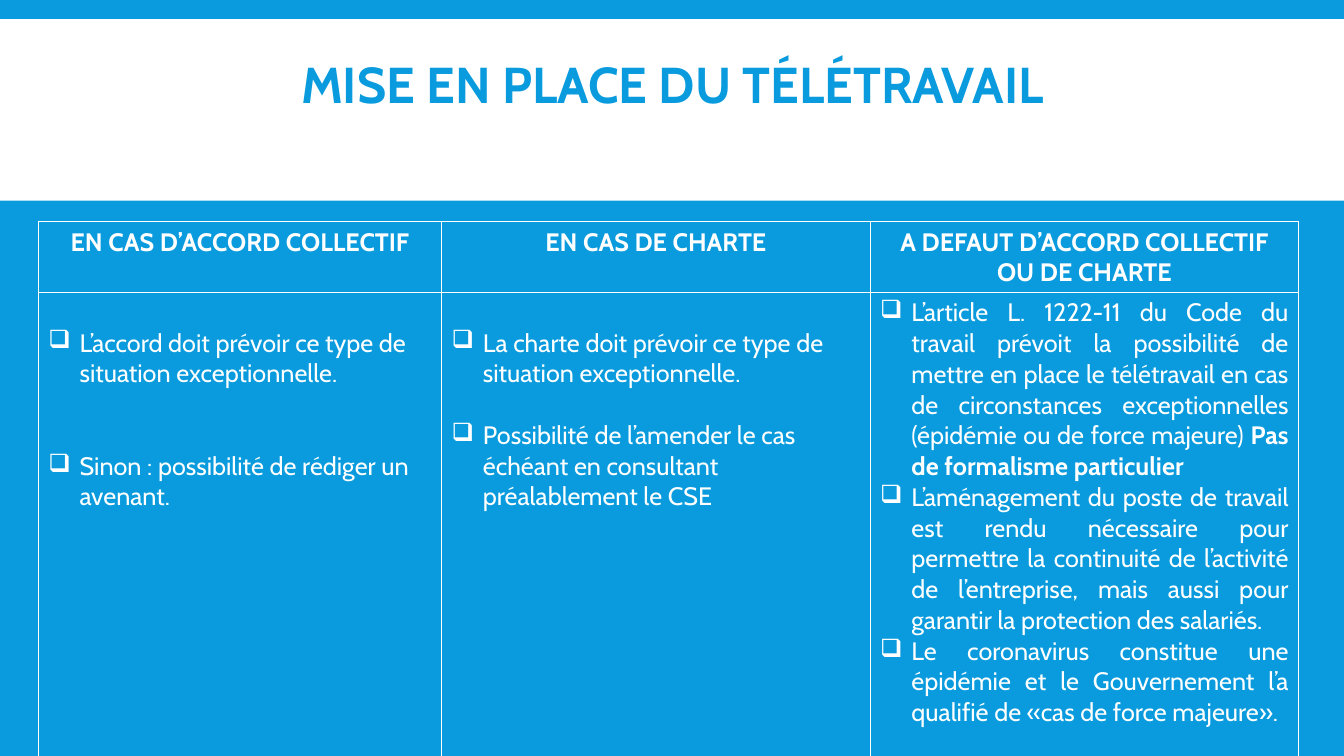
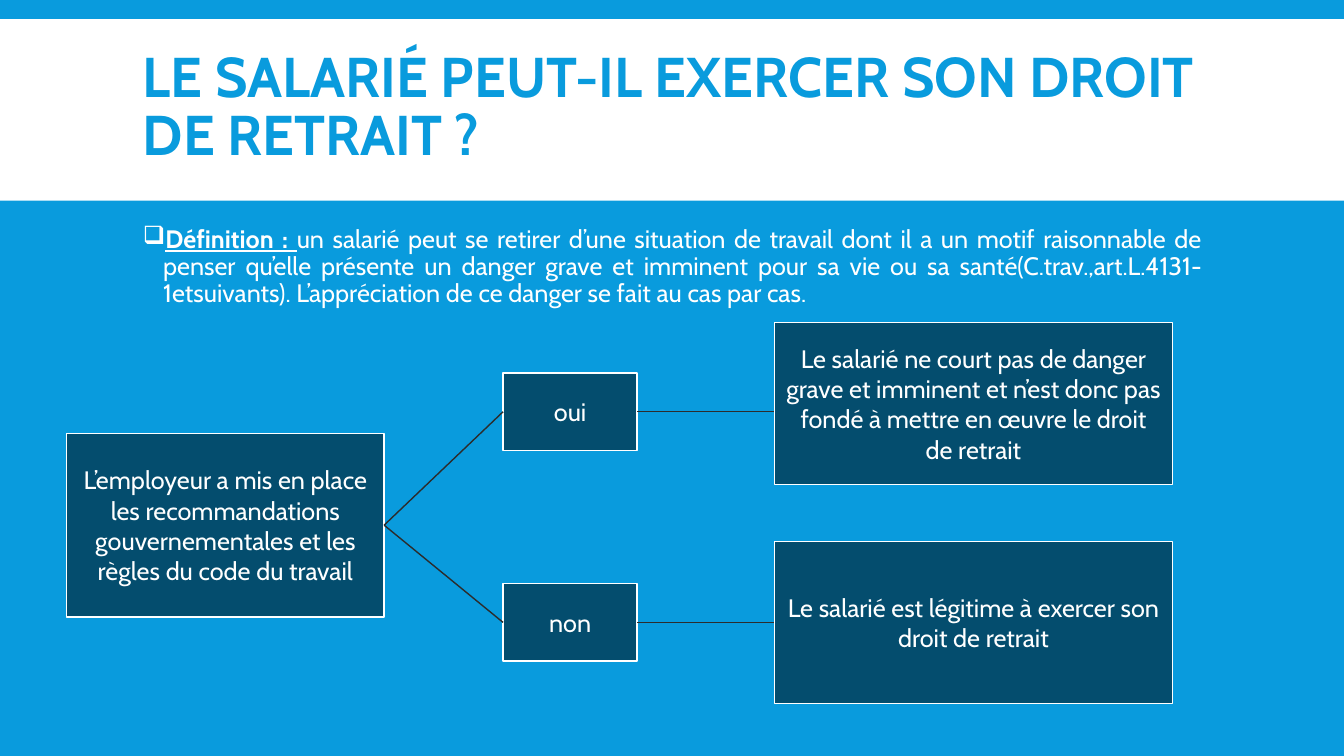
from lxml import etree
from pptx import Presentation
from pptx.dml.color import RGBColor
from pptx.enum import shapes, text
from pptx.oxml import ns
from pptx.util import Inches, Pt

BLUE = RGBColor(0x09, 0x9B, 0xDD)
NAVY = RGBColor(0x04, 0x4D, 0x6E)
WHITE = RGBColor(0xFF, 0xFF, 0xFF)
CHARCOAL = RGBColor(0x2C, 0x2C, 0x2C)
FONT = "Cabin"
SLIDE_WIDTH, SLIDE_HEIGHT = 13.33, 7.5
TEXT_LEFT, TEXT_WIDTH = 1.32, 10.7
LEFT, CENTER, JUSTIFY = text.PP_ALIGN.LEFT, text.PP_ALIGN.CENTER, text.PP_ALIGN.JUSTIFY
LINE_GAP = 22  # height of one 18 pt line, in points

HEADINGS = ["EN CAS D’ACCORD COLLECTIF", "EN CAS DE CHARTE",
            "A DEFAUT D’ACCORD COLLECTIF OU DE CHARTE"]
# One entry per column: alignment, top margin, gap between items, items made of (text, bold) runs
COLUMNS = [
    (LEFT, 0.35, 2 * LINE_GAP, [
        [("L’accord doit prévoir ce type de situation exceptionnelle.", False)],
        [("Sinon : possibilité de rédiger un avenant.", False)]]),
    (LEFT, 0.35, LINE_GAP, [
        [("La charte doit prévoir ce type de situation exceptionnelle.", False)],
        [("Possibilité de l’amender le cas échéant en consultant préalablement le CSE", False)]]),
    (JUSTIFY, 0.05, 0, [
        [("L’article L. 1222-11 du Code du travail prévoit la possibilité de mettre en place le "
          "télétravail en cas de circonstances exceptionnelles (épidémie ou de force majeure) ", False),
         ("Pas de formalisme particulier", True)],
        [("L’aménagement du poste de travail est rendu nécessaire pour permettre la continuité de "
          "l’activité de l’entreprise, mais aussi pour garantir la protection des salariés.", False)],
        [("Le coronavirus constitue une épidémie et le Gouvernement l’a qualifié de "
          "«cas de force majeure».", False)]]),
]


def set_font(paragraph, size=18, color=WHITE, bold=None):
    font = paragraph.font
    font.name, font.size, font.bold = FONT, Pt(size), bold
    font.color.rgb = color


def add_bullet(paragraph, indent):
    properties = paragraph._p.get_or_add_pPr()
    properties.set("marL", str(Inches(indent)))
    properties.set("indent", str(-Inches(indent)))
    bullet = etree.Element(ns.qn("a:buChar"), char="❑")
    # Bullets come before the default run properties
    default_run = properties.find(ns.qn("a:defRPr"))
    if default_run is None:
        properties.append(bullet)
    else:
        default_run.addprevious(bullet)


def add_rectangle(slide, box, fill):
    rectangle = slide.shapes.add_shape(shapes.MSO_SHAPE.RECTANGLE, *map(Inches, box))
    rectangle.shadow.inherit = False
    rectangle.fill.solid()
    rectangle.fill.fore_color.rgb = fill
    return rectangle


def add_text_box(slide, box):
    frame = slide.shapes.add_textbox(*map(Inches, box)).text_frame
    frame.word_wrap = True
    return frame


def add_titled_slide(presentation, title, top, height, size, alignment):
    """Blue slide with the white band and its title."""
    slide = presentation.slides.add_slide(presentation.slide_layouts[6])
    slide.background.fill.solid()
    slide.background.fill.fore_color.rgb = BLUE
    add_rectangle(slide, (0, 0.19, SLIDE_WIDTH, 1.8), WHITE).line.fill.background()

    frame = add_text_box(slide, (TEXT_LEFT, top, TEXT_WIDTH, height))
    frame.vertical_anchor = text.MSO_ANCHOR.MIDDLE
    paragraph = frame.paragraphs[0]
    paragraph.text = title
    paragraph.alignment = alignment
    paragraph.line_spacing = 0.85
    set_font(paragraph, size, BLUE, True)
    return slide


def set_borders(cell):
    properties = cell._tc.get_or_add_tcPr()
    for position, side in enumerate(("lnL", "lnR", "lnT", "lnB")):
        line = etree.Element(ns.qn(f"a:{side}"), w=str(Pt(1)))
        fill = etree.SubElement(line, ns.qn("a:solidFill"))
        etree.SubElement(fill, ns.qn("a:srgbClr"), val=str(WHITE))
        properties.insert(position, line)


def fill_column_cell(cell, alignment, top_margin, gap, items):
    cell.margin_top = Inches(top_margin)
    frame = cell.text_frame
    for index, runs in enumerate(items):
        paragraph = frame.add_paragraph() if index else frame.paragraphs[0]
        paragraph.alignment = alignment
        paragraph.space_before = Pt(gap if index else 0)
        set_font(paragraph)
        add_bullet(paragraph, 0.31)
        for words, bold in runs:
            run = paragraph.add_run()
            run.text = words
            run.font.bold = bold


def add_cases_table(slide, left, top, widths, heights):
    table = slide.shapes.add_table(
        len(heights), len(widths), Inches(left), Inches(top),
        Inches(sum(widths)), Inches(sum(heights))).table
    table.first_row = table.horz_banding = False
    for row, height in zip(table.rows, heights):
        row.height = Inches(height)
    for index, width in enumerate(widths):
        table.columns[index].width = Inches(width)
        heading = table.cell(0, index)
        paragraph = heading.text_frame.paragraphs[0]
        paragraph.text = HEADINGS[index]
        paragraph.alignment = CENTER
        set_font(paragraph, bold=True)
        fill_column_cell(table.cell(1, index), *COLUMNS[index])
    for cell in table.iter_cells():
        cell.fill.background()
        set_borders(cell)


def add_definition(slide, box):
    paragraph = add_text_box(slide, box).paragraphs[0]
    paragraph.alignment = JUSTIFY
    paragraph.line_spacing = 0.9
    set_font(paragraph)
    add_bullet(paragraph, 0.2)
    term = paragraph.add_run()
    term.text = "Définition : "
    term.font.bold = term.font.underline = True
    paragraph.add_run().text = (
        "un salarié peut se retirer d’une situation de travail dont il a un motif raisonnable de "
        "penser qu’elle présente un danger grave et imminent pour sa vie ou sa "
        "santé(C.trav.,art.L.4131-1etsuivants). L’appréciation de ce danger se fait au cas par cas.")


def add_node(slide, box, words):
    node = add_rectangle(slide, box, NAVY)
    node.line.color.rgb = WHITE
    node.line.width = Pt(1)
    frame = node.text_frame
    frame.word_wrap = True
    frame.vertical_anchor = text.MSO_ANCHOR.MIDDLE
    paragraph = frame.paragraphs[0]
    paragraph.text = words
    paragraph.alignment = CENTER
    set_font(paragraph)
    return node


def add_link(slide, start, end):
    """Link the right side of start to the left side of end, level with start if it can be."""
    start_y = start.top + start.height // 2
    end_y = end.top + end.height // 2
    level = end.top < start_y < end.top + end.height
    link = slide.shapes.add_connector(
        shapes.MSO_CONNECTOR.STRAIGHT, start.left + start.width, start_y,
        end.left, start_y if level else end_y)
    link.begin_connect(start, 3)
    if not level or abs(end_y - start_y) < Inches(0.02):
        link.end_connect(end, 1)
    link.line.color.rgb = CHARCOAL
    link.line.width = Pt(1)
    etree.SubElement(link._element.spPr, ns.qn("a:effectLst"))


def add_decision_tree(slide, left, top):
    employer = add_node(slide, (left, top + 1.1, 3.15, 1.82),
                        "L’employeur a mis en place les recommandations gouvernementales "
                        "et les règles du code du travail")
    branches = [
        ("oui", 0.5, 0, "Le salarié ne court pas de danger grave et imminent et n’est donc pas "
                        "fondé à mettre en œuvre le droit de retrait"),
        ("non", 2.59, 2.17, "Le salarié est légitime à exercer son droit de retrait"),
    ]
    for answer, answer_top, outcome_top, outcome in branches:
        answer_node = add_node(slide, (left + 4.33, top + answer_top, 1.33, 0.77), answer)
        outcome_node = add_node(slide, (left + 7.02, top + outcome_top, 3.95, 1.61), outcome)
        add_link(slide, employer, answer_node)
        add_link(slide, answer_node, outcome_node)


def main():
    presentation = Presentation()
    presentation.slide_width = Inches(SLIDE_WIDTH)
    presentation.slide_height = Inches(SLIDE_HEIGHT)

    # Setting up remote work
    slide = add_titled_slide(presentation, "MISE EN PLACE DU TÉLÉTRAVAIL", 0.31, 1.12, 36, CENTER)
    add_cases_table(slide, 0.38, 2.2, (4, 4.25, 4.25), (0.7, 5.2))

    # Right of withdrawal
    slide = add_titled_slide(presentation, "LE SALARIÉ PEUT-IL EXERCER SON DROIT DE RETRAIT ?",
                             0.26, 1.65, 40, LEFT)
    add_definition(slide, (TEXT_LEFT, 2.2, TEXT_WIDTH, 0.95))
    add_decision_tree(slide, 0.66, 3.2)

    presentation.save("out.pptx")


if __name__ == "__main__":
    main()
